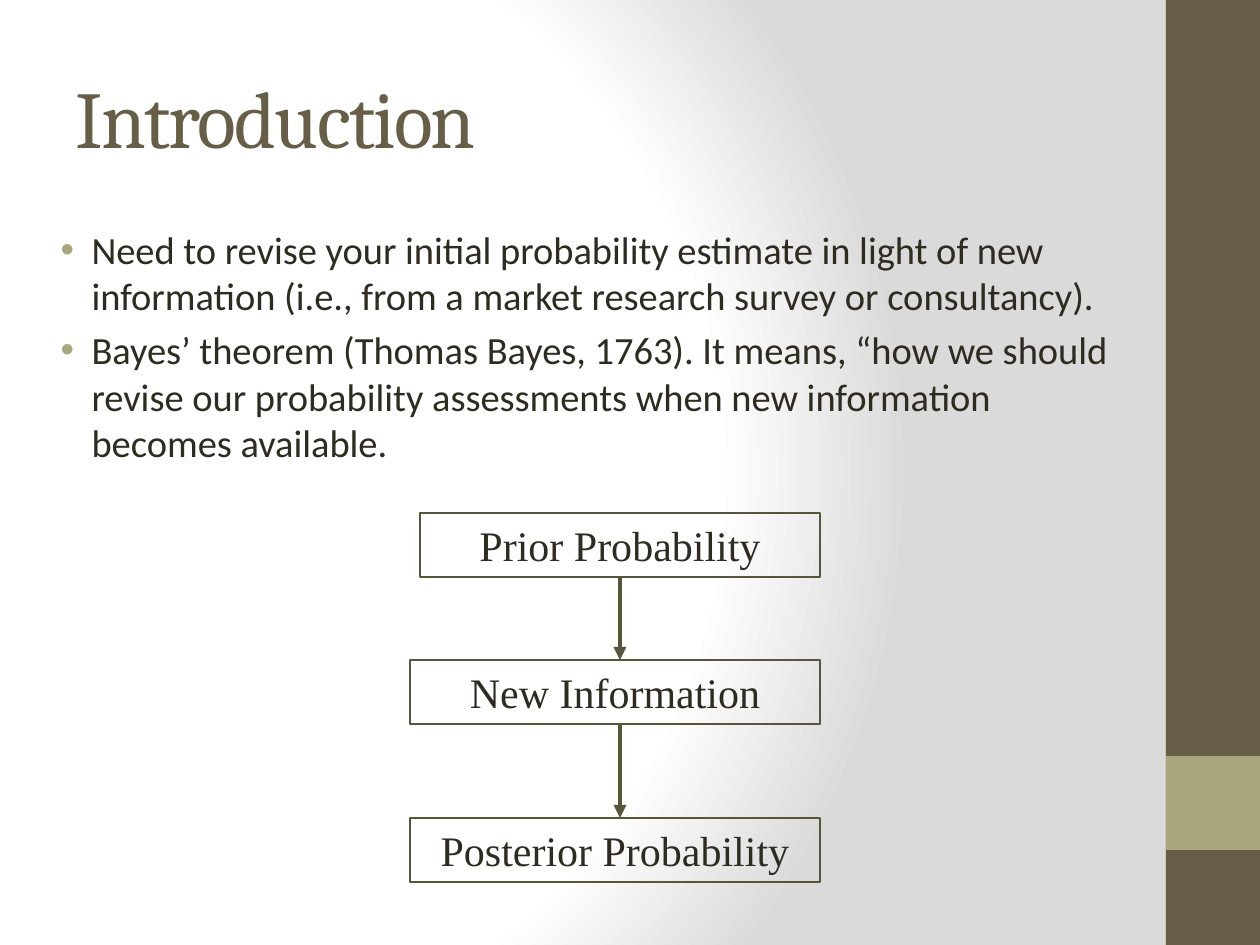
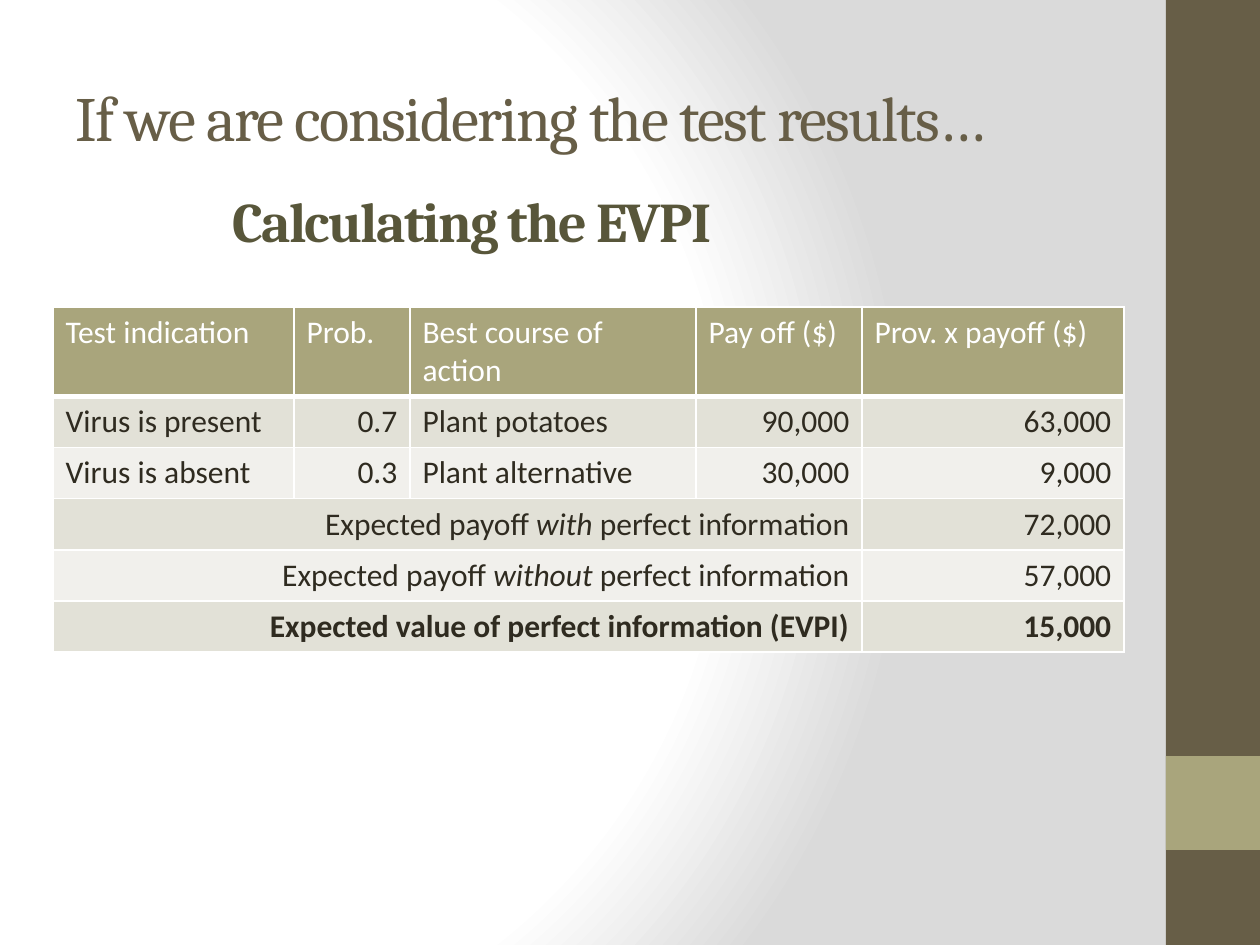
from lxml.etree import SubElement
from pptx import Presentation
from pptx.dml.color import RGBColor
from pptx.enum.shapes import MSO_CONNECTOR, MSO_SHAPE
from pptx.enum.text import MSO_ANCHOR, MSO_AUTO_SIZE, PP_ALIGN
from pptx.oxml import parse_xml
from pptx.oxml.ns import nsdecls, qn
from pptx.util import Emu, Pt

SCALE = 914400 / 126  # EMU in one px
BROWN, OLIVE, SAGE = "675E47", "58563A", "A9A57C"
INK, WHITE, GREY = "2F2B20", "FFFFFF", "DADADA"
BANDS = ["E2E1D7", "F1F0EC"]
HEAD, BODY, SERIF = "Cambria", "Calibri", "Times New Roman"


def px(num):
    return Emu(round(num * SCALE))


def rgb(code):
    return RGBColor.from_string(code)


class Deck:
    def __init__(self):
        self.prs = Presentation()
        self.prs.slide_width, self.prs.slide_height = px(1260), px(945)
        self.slide = None
        self.paint()

    def paint(self):
        """Give the master its round gradient."""
        data = self.prs.slide_master.element.find(qn("p:cSld"))
        data.remove(data.find(qn("p:bg")))
        stops = "".join(
            f'<a:gs pos="{pos}"><a:srgbClr val="{code}"/></a:gs>'
            for pos, code in [(0, WHITE), (75000, WHITE), (100000, GREY)])
        data.insert(0, parse_xml(
            f'<p:bg {nsdecls("p", "a")}><p:bgPr><a:gradFill rotWithShape="1">'
            f'<a:gsLst>{stops}</a:gsLst><a:path path="circle">'
            '<a:fillToRect l="20000" t="50000" r="100000" b="50000"/></a:path>'
            '</a:gradFill><a:effectLst/></p:bgPr></p:bg>'))

    def bands(self):
        """Draw the side bands and hand them to the master."""
        tree = self.prs.slide_master.shapes.element
        for num, (top, high, code) in enumerate([(0, 945, BROWN), (756, 94, SAGE)]):
            band = self.rect(1166, top, 94, high).element
            shape = self.slide.shapes[-1]
            shape.fill.solid()
            shape.fill.fore_color.rgb = rgb(code)
            shape.line.fill.background()
            band.nvSpPr.cNvPr.set("id", str(20 + num))
            tree.insert(2 + num, band)

    def page(self, kind, title, size):
        first = self.slide is None
        self.slide = self.prs.slides.add_slide(self.prs.slide_layouts[kind])
        if first:
            self.bands()
        self.head(self.slide.shapes.title, (63, 38, 1050, 157), title, size, BROWN)

    def place(self, shape, area):
        shape.left, shape.top, shape.width, shape.height = map(px, area)

    def style(self, para, size, font, code, bold=False):
        for run in para.runs:
            run.font.size, run.font.name, run.font.bold = Pt(size), font, bold
            run.font.color.rgb = rgb(code)

    def head(self, shape, area, text, size, code, bold=False):
        self.place(shape, area)
        frame = shape.text_frame
        frame.text = text
        frame.word_wrap = True
        frame.auto_size = MSO_AUTO_SIZE.NONE
        frame.vertical_anchor = MSO_ANCHOR.MIDDLE
        para = frame.paragraphs[0]
        para.alignment = PP_ALIGN.LEFT
        self.style(para, size, HEAD, code, bold)
        for run in para.runs:
            run.font._element.set("spc", "-100")

    def label(self, area, text, size, code):
        shape = self.slide.shapes.add_textbox(*map(px, area))
        self.head(shape, area, text, size, code, True)

    def list(self, area, items):
        shape = self.slide.placeholders[1]
        self.place(shape, area)
        frame = shape.text_frame
        frame.auto_size = MSO_AUTO_SIZE.NONE
        frame.text = "\n".join(items)
        for num, para in enumerate(frame.paragraphs):
            props = para._p.get_or_add_pPr()
            props.set("marL", str(px(47)))
            props.set("indent", str(-px(31)))
            SubElement(SubElement(props, qn("a:buClr")), qn("a:srgbClr"), val=SAGE)
            SubElement(props, qn("a:buFont"), typeface="Arial")
            SubElement(props, qn("a:buChar"), char="•")
            para.space_before = Pt(4.4 if num else 0)
            self.style(para, 22, BODY, INK)

    def rect(self, *area):
        shape = self.slide.shapes.add_shape(MSO_SHAPE.RECTANGLE, *map(px, area))
        shape.shadow.inherit = False
        return shape

    def box(self, area, text):
        shape = self.rect(*area)
        shape.fill.background()
        shape.line.color.rgb = rgb(OLIVE)
        shape.line.width = Pt(0.75)
        frame = shape.text_frame
        frame.text = text
        frame.word_wrap = True
        frame.vertical_anchor = MSO_ANCHOR.MIDDLE
        frame.paragraphs[0].alignment = PP_ALIGN.CENTER
        self.style(frame.paragraphs[0], 24, SERIF, INK)
        return shape

    def arrow(self, mid, top, end):
        line = self.slide.shapes.add_connector(
            MSO_CONNECTOR.STRAIGHT, px(mid), px(top), px(mid), px(end))
        line.line.color.rgb = rgb(OLIVE)
        line.line.width = Pt(2.5)
        SubElement(line.line._get_or_add_ln(), qn("a:tailEnd"), type="triangle")
        SubElement(line.element.spPr, qn("a:effectLst"))
        return line

    def edge(self, cell, low):
        """Rule a cell in white, with its lower line as wide as asked."""
        props = cell._tc.get_or_add_tcPr()
        for num, (side, wide) in enumerate([("L", 1), ("R", 1), ("T", 1), ("B", low)]):
            props.insert(num, parse_xml(
                f'<a:ln{side} {nsdecls("a")} w="{Pt(wide)}"><a:solidFill>'
                f'<a:srgbClr val="{WHITE}"/></a:solidFill></a:ln{side}>'))

    def table(self, left, top, cols, highs, rows, right):
        grid = self.slide.shapes.add_table(
            len(highs), len(cols), px(left), px(top),
            px(sum(cols)), px(sum(highs))).table
        for col, wide in zip(grid.columns, cols):
            col.width = px(wide)
        for y, (row, high) in enumerate(zip(rows, highs)):
            grid.rows[y].height = px(high)
            last = y == len(rows) - 1
            for x in range(len(cols)):
                cell = grid.cell(y, x)
                cell.fill.solid()
                cell.fill.fore_color.rgb = rgb(BANDS[(y - 1) % 2] if y else SAGE)
                self.edge(cell, 1 if y else 3)
            # A short row is a sum: its first cell spans all but the last column
            total = len(row) < len(cols)
            if total:
                grid.cell(y, 0).merge(grid.cell(y, len(cols) - 2))
            spots = [0, len(cols) - 1] if total else range(len(cols))
            for x, text in zip(spots, row):
                para = grid.cell(y, x).text_frame.paragraphs[0]
                for num, part in enumerate(text.split("|")):
                    run = para.add_run()
                    run.text = part
                    run.font.italic = num == 1
                if y and (total or x in right):
                    para.alignment = PP_ALIGN.RIGHT
                self.style(para, 18, BODY, INK if y else WHITE, last)


def main():
    deck = Deck()

    # Introduction: list and chain of boxes
    deck.page(1, "Introduction", 46)
    deck.list((32, 220, 1092, 672), [
        "Need to revise your initial probability estimate in light of new "
        "information (i.e., from a market research survey or consultancy).",
        "Bayes’ theorem (Thomas Bayes, 1763). It means, “how we should revise "
        "our probability assessments when new information becomes available."])
    prior = deck.box((420, 513, 400, 64), "Prior Probability")
    deck.box((410, 660, 410, 64), "New Information")
    deck.box((410, 818, 410, 64), "Posterior Probability")
    deck.arrow(620, 577, 660).begin_connect(prior, 2)
    deck.arrow(620, 724, 818)

    # Test results: EVPI table, with | around words in italics
    deck.page(5, "If we are considering the test results…", 36)
    deck.table(53, 307, [241, 116, 286, 166, 262], [89] + [51] * 5, [
        ["Test indication", "Prob.", "Best course of action", "Pay off ($)",
         "Prov. x payoff ($)"],
        ["Virus is present", "0.7", "Plant potatoes", "90,000", "63,000"],
        ["Virus is absent", "0.3", "Plant alternative", "30,000", "9,000"],
        ["Expected payoff |with |perfect information", "72,000"],
        ["Expected payoff |without |perfect information", "57,000"],
        ["Expected value of perfect information (EVPI)", "15,000"],
    ], right=(1, 3, 4))
    deck.label((220, 168, 798, 105), "Calculating the EVPI", 32, OLIVE)

    deck.prs.save("out.pptx")


if __name__ == "__main__":
    main()
